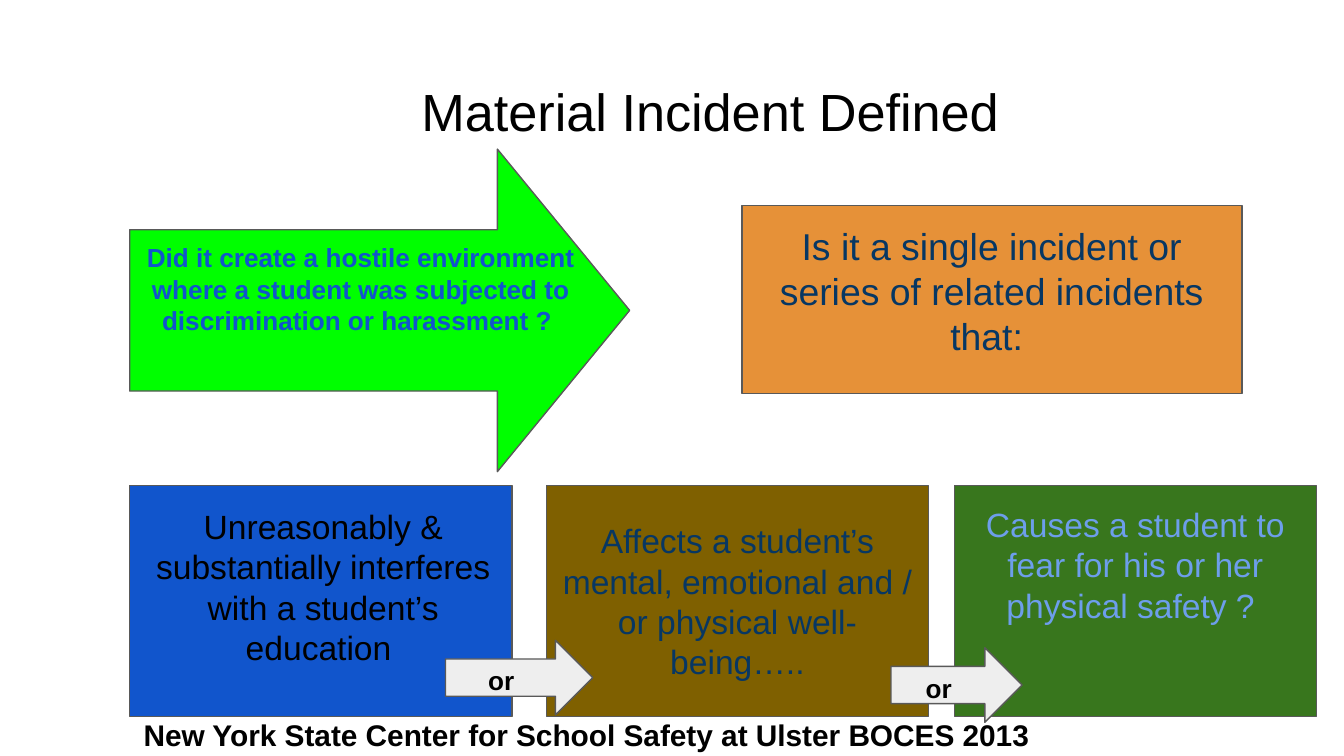
import pptx
import pptx.util
import pptx.dml.color
import pptx.enum.shapes
import pptx.enum.text

PX = 4572
FONT = "Arial"
SHAPE = pptx.enum.shapes.MSO_SHAPE
ALIGN = pptx.enum.text.PP_ALIGN
ANCHOR = pptx.enum.text.MSO_ANCHOR
COLORS = {
    "black": "000000", "lime": "00FF00", "blue": "1155CC",
    "orange": "E69138", "navy": "073763", "brown": "7F6000",
    "green": "38761D", "sky": "6D9EEB", "pale": "EEEEEE", "edge": "595959",
}


def color(name):
    """Return the named colour."""
    return pptx.dml.color.RGBColor.from_string(COLORS[name])


def scale(box):
    """Turn a box in px into EMU."""
    return [side * PX for side in box]


def write(frame, text, size, ink, bold=False, align=ALIGN.CENTER,
          anchor=ANCHOR.TOP, left=20):
    """Fill a text frame with one formatted paragraph."""
    frame.word_wrap = True
    frame.auto_size = pptx.enum.text.MSO_AUTO_SIZE.NONE
    frame.vertical_anchor = anchor
    frame.margin_left = left * PX
    frame.margin_top = frame.margin_right = frame.margin_bottom = 20 * PX
    line = frame.paragraphs[0]
    line.text = text
    line.alignment = align
    line.font.name = FONT
    line.font.size = pptx.util.Pt(size)
    line.font.bold = bold
    line.font.color.rgb = color(ink)


def label(slide, box, text, size, ink, **style):
    """Add a text box."""
    area = slide.shapes.add_textbox(*scale(box))
    write(area.text_frame, text, size, ink, **style)


def block(slide, kind, box, fill):
    """Add a filled shape with a thin outline."""
    shape = slide.shapes.add_shape(kind, *scale(box))
    shape.shadow.inherit = False
    shape.fill.solid()
    shape.fill.fore_color.rgb = color(fill)
    shape.line.color.rgb = color("edge")
    shape.line.width = pptx.util.Pt(0.75)
    return shape


def head(slide, box):
    """Place the slide title."""
    title = slide.shapes.title
    title.left, title.top, title.width, title.height = scale(box)
    write(title.text_frame, "Material Incident Defined", 28, "black",
          align=ALIGN.LEFT, left=559)


def ask(slide, box):
    """Place the opening question on a large arrow."""
    x, y, wide, high = box
    arrow = block(slide, SHAPE.RIGHT_ARROW, box, "lime")
    arrow.adjustments[1] = 0.41
    label(slide, (x, y + 118, wide - 56, high - 228),
          "Did it create a hostile environment where a student was "
          "subjected to discrimination or harassment ? ",
          14, "blue", bold=True)


def lead(slide, box):
    """Place the lead-in to the three effects."""
    x, y, wide, high = box
    block(slide, SHAPE.RECTANGLE, box, "orange")
    label(slide, (x, y + 6, wide, high),
          "Is it a single incident or series of related incidents that: ",
          20, "navy")


def effects(slide, box):
    """Place the row of three effects."""
    x, y, wide, high = box
    kind = SHAPE.FLOWCHART_PROCESS
    block(slide, kind, (x, y, 569, high), "blue")
    mid = block(slide, kind, (x + 620, y, 569, high), "brown")
    write(mid.text_frame,
          "Affects a student’s mental, emotional and / or physical "
          "well-being…..", 18, "navy", anchor=ANCHOR.MIDDLE)
    last = x + wide - 539
    block(slide, kind, (last, y, 539, high), "green")
    label(slide, (x + 7, y + 10, 562, high - 8),
          "Unreasonably & substantially interferes with a student’s "
          "education ", 18, "black")
    label(slide, (last, y + 7, 539, high - 8),
          "Causes a student to fear for his or her physical safety ? ",
          18, "sky")


def choice(slide, box, inset, width, high):
    """Place a small arrow that reads "or"."""
    x, y = box[:2]
    block(slide, SHAPE.RIGHT_ARROW, box, "pale")
    label(slide, (x + inset, y + 16, width, high), "or", 14, "black",
          bold=True)


def foot(slide, box):
    """Place the credit line."""
    label(slide, box,
          "New York State Center for School Safety at Ulster BOCES 2013",
          16, "black", bold=True, align=ALIGN.LEFT)


def main():
    """Build and save the slide."""
    deck = pptx.Presentation()
    deck.slide_width, deck.slide_height = scale((2000, 1125))
    slide = deck.slides.add_slide(deck.slide_layouts[5])
    head(slide, (68, 98, 1864, 126))
    ask(slide, (193, 222, 744, 480))
    lead(slide, (1104, 306, 744, 280))
    effects(slide, (193, 723, 1766, 343))
    choice(slide, (663, 953, 219, 111), 0, 166, 78)
    choice(slide, (1326, 964, 195, 111), 6, 130, 172)
    foot(slide, (194, 1047, 1806, 78))
    deck.save("out.pptx")


if __name__ == "__main__":
    main()
